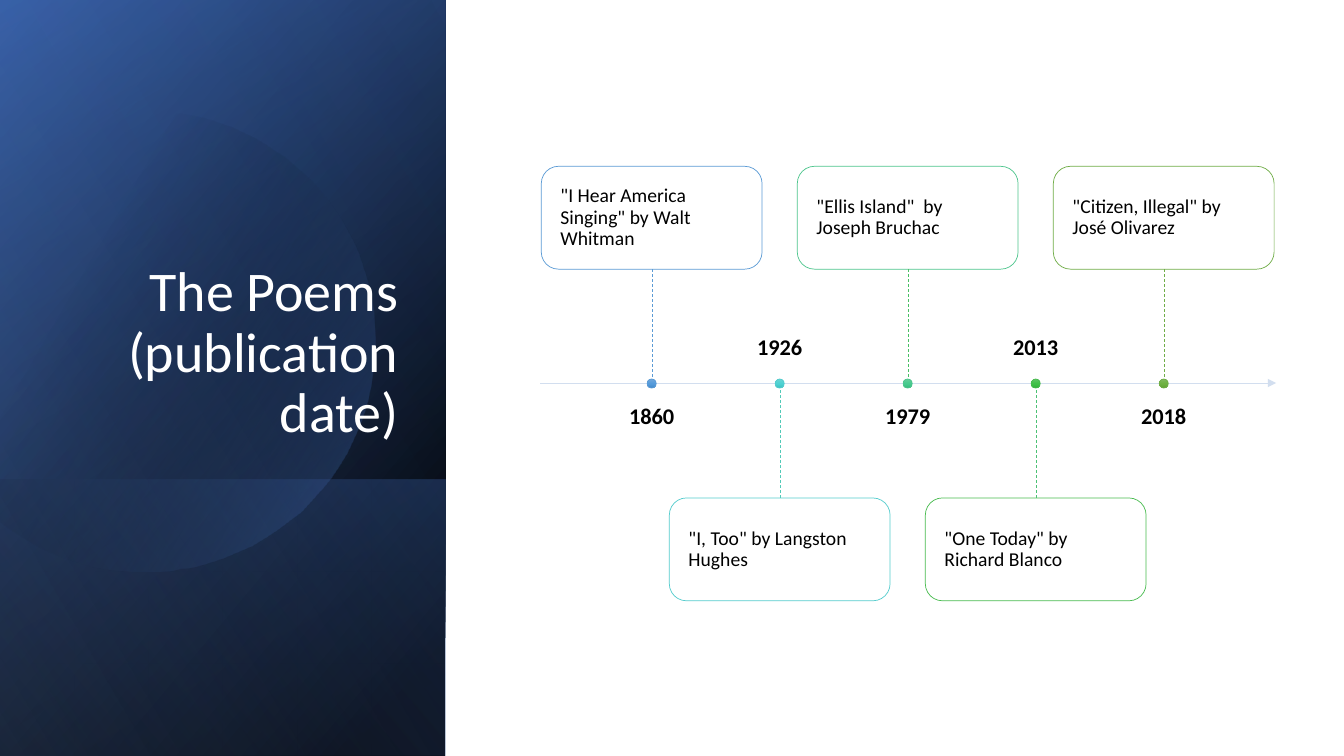
from pptx import Presentation
from pptx.dml.color import RGBColor
from pptx.enum.dml import MSO_LINE as Dash
from pptx.enum.shapes import MSO_CONNECTOR as Conn, MSO_SHAPE as Kind
from pptx.enum.text import MSO_ANCHOR as Anchor, PP_ALIGN as Align
from pptx.oxml import parse_xml
from pptx.oxml.ns import nsdecls
from pptx.util import Emu, Pt

SCALE = 9144
FONT = "Calibri"


def px(num):
    return Emu(round(num * SCALE))


def tint(code):
    return RGBColor.from_string(code)


def put(item, vals):
    for key, val in vals.items():
        setattr(item, key, val)


def pad(num):
    return {f"margin_{side}": px(num) for side in ("left", "top", "right", "bottom")}


def curve(start, one, two, end, count=24):
    for step in range(1, count + 1):
        t = step / count
        u = 1 - t
        yield tuple(
            u**3 * a + 3 * u * u * t * b + 3 * u * t * t * c + t**3 * d
            for a, b, c, d in zip(start, one, two, end)
        )


class Board:
    def __init__(self, deck):
        self.shapes = deck.slides.add_slide(deck.slide_layouts[6]).shapes

    def blend(self, shape, stops, angle):
        marks = "".join(
            f'<a:gs pos="{pos * 1000}"><a:srgbClr val="{code}">'
            f'<a:alpha val="{alpha * 1000}"/></a:srgbClr></a:gs>'
            for pos, code, alpha in stops
        )
        shape._element.spPr.insert(2, parse_xml(
            f'<a:gradFill {nsdecls("a")} rotWithShape="1"><a:gsLst>{marks}</a:gsLst>'
            f'<a:lin ang="{angle * 60000}" scaled="0"/></a:gradFill>'
        ))

    def edge(self, shape, code):
        shape.shadow.inherit = False
        if code:
            shape.line.color.rgb = tint(code)
            shape.line.width = Pt(0.5)
        else:
            shape.line.fill.background()

    def form(self, kind, box, line=None):
        shape = self.shapes.add_shape(kind, *map(px, box))
        self.edge(shape, line)
        return shape

    def panel(self, box, stops, angle):
        left, top, wide, high = box
        side = (left + (wide - high) / 2, top + (high - wide) / 2, high, wide)
        shape = self.form(Kind.RECTANGLE, side)
        shape.rotation = 90
        shape._element.spPr.xfrm.set("flipH", "1")
        self.blend(shape, stops, angle)

    def disc(self, start, parts, stops, angle):
        points, last = [], start
        for part in parts:
            points += curve(last, *part) if len(part) == 3 else part
            last = part[-1]
        pen = self.shapes.build_freeform(*start, scale=SCALE)
        pen.add_line_segments(points, close=True)
        shape = pen.convert_to_shape()
        self.edge(shape, None)
        self.blend(shape, stops, angle)

    def say(self, frame, text, size, code, form, para, bold=False):
        put(frame, {"word_wrap": True, **form})
        line = frame.paragraphs[0]
        put(line, {"line_spacing": 0.9, **para})
        run = line.add_run()
        run.text = text
        put(run.font, {"name": FONT, "size": Pt(size), "bold": bold})
        run.font.color.rgb = tint(code)

    def label(self, box, *args, **more):
        self.say(self.shapes.add_textbox(*map(px, box)).text_frame, *args, **more)

    def card(self, box, text, code):
        shape = self.form(Kind.ROUNDED_RECTANGLE, box, code)
        shape.fill.solid()
        shape.fill.fore_color.rgb = tint("FFFFFF")
        form = {"vertical_anchor": Anchor.MIDDLE, **pad(14)}
        self.say(shape.text_frame, text, 14, "000000", form, {"alignment": Align.LEFT})

    def rule(self, ends, code, dash=None, head=False):
        line = self.shapes.add_connector(Conn.STRAIGHT, *map(px, ends))
        line.line.color.rgb = tint(code)
        put(line.line, {"width": Pt(0.5), "dash_style": dash})
        if head:
            line._element.spPr.ln.append(
                parse_xml(f'<a:tailEnd {nsdecls("a")} type="triangle"/>'))
        line._element.spPr.append(parse_xml(f'<a:effectLst {nsdecls("a")}/>'))

    def dot(self, x, y, code, shades):
        shape = self.form(Kind.OVAL, (x - 5, y - 4, 9, 9), code)
        self.blend(shape, [(i * 50, shade, 100) for i, shade in enumerate(shades)], 90)


POEMS = [
    ("1860", '"I Hear America Singing" by Walt Whitman', "5B9BD5", "5B9BD5",
     ("71A6DB", "559BDB", "448ACA")),
    ("1926", '"I, Too" by Langston Hughes', "54CCCD", "52CAB8",
     ("6CD3D3", "4ED2D3", "3EC2C3")),
    ("1979", '"Ellis Island"  by Joseph Bruchac', "4DC58D", "49BF64",
     ("67CC9A", "47CB8E", "39BB7F")),
    ("2013", '"One Today" by Richard Blanco', "48BB4F", "4BC174",
     ("63C368", "42C14A", "34B23D")),
    ("2018", '"Citizen, Illegal" by José Olivarez', "70AD47", "70AD47",
     ("81B861", "6FB242", "62A336")),
]
AXIS, FIRST, STEP = 380, 647, 127


def main():
    deck = Presentation()
    put(deck, {"slide_width": px(1333.33), "slide_height": px(750)})
    board = Board(deck)

    full = (0, 0, 442, 750)
    board.panel(full, [(8, "000000", 100), (100, "2F5597", 100)], 50)
    board.panel(full, [(0, "000000", 0), (99, "4472C4", 46)], 30)
    board.panel((0, 476, 442, 274), [(2, "4472C4", 29), (100, "000000", 30)], 130)
    board.disc((149, 110), [
        [(246, 112), (335, 177), (363, 275)],
        [(398, 397), (328, 523), (207, 558)],
        [(131, 580), (53, 561), (-3, 514)],
        [(-15, 503), (-15, 175)],
        [(0, 161)],
        [(23, 142), (50, 128), (80, 119)],
        [(103, 113), (126, 110), (149, 110)],
    ], [(29, "000000", 0), (100, "4472C4", 43)], 30)
    board.panel(full, [(0, "000000", 0), (99, "8FAADC", 11)], 120)
    board.label((64, 184, 341, 262), "The Poems (publication date)", 40, "FFFFFF",
                {"vertical_anchor": Anchor.BOTTOM}, {"alignment": Align.RIGHT})

    board.rule((536, AXIS, 1266, AXIS), "D2DEEF", head=True)
    for i, (year, poem, code, stem, shades) in enumerate(POEMS):
        x, low = FIRST + i * STEP, i % 2
        top, near = (494, 494) if low else (165, 267)
        form = {"vertical_anchor": Anchor.BOTTOM if low else Anchor.TOP, **pad(0)}
        board.label((x - 97, 291 if low else 402, 193, 67), year, 16, "000000",
                    form, {"alignment": Align.CENTER}, bold=True)
        board.card((x - 110, top, 219, 102), poem, code)
        board.rule((x, near, x, AXIS), stem, Dash.DASH)
        board.dot(x, AXIS, code, shades)

    deck.save("out.pptx")


if __name__ == "__main__":
    main()
